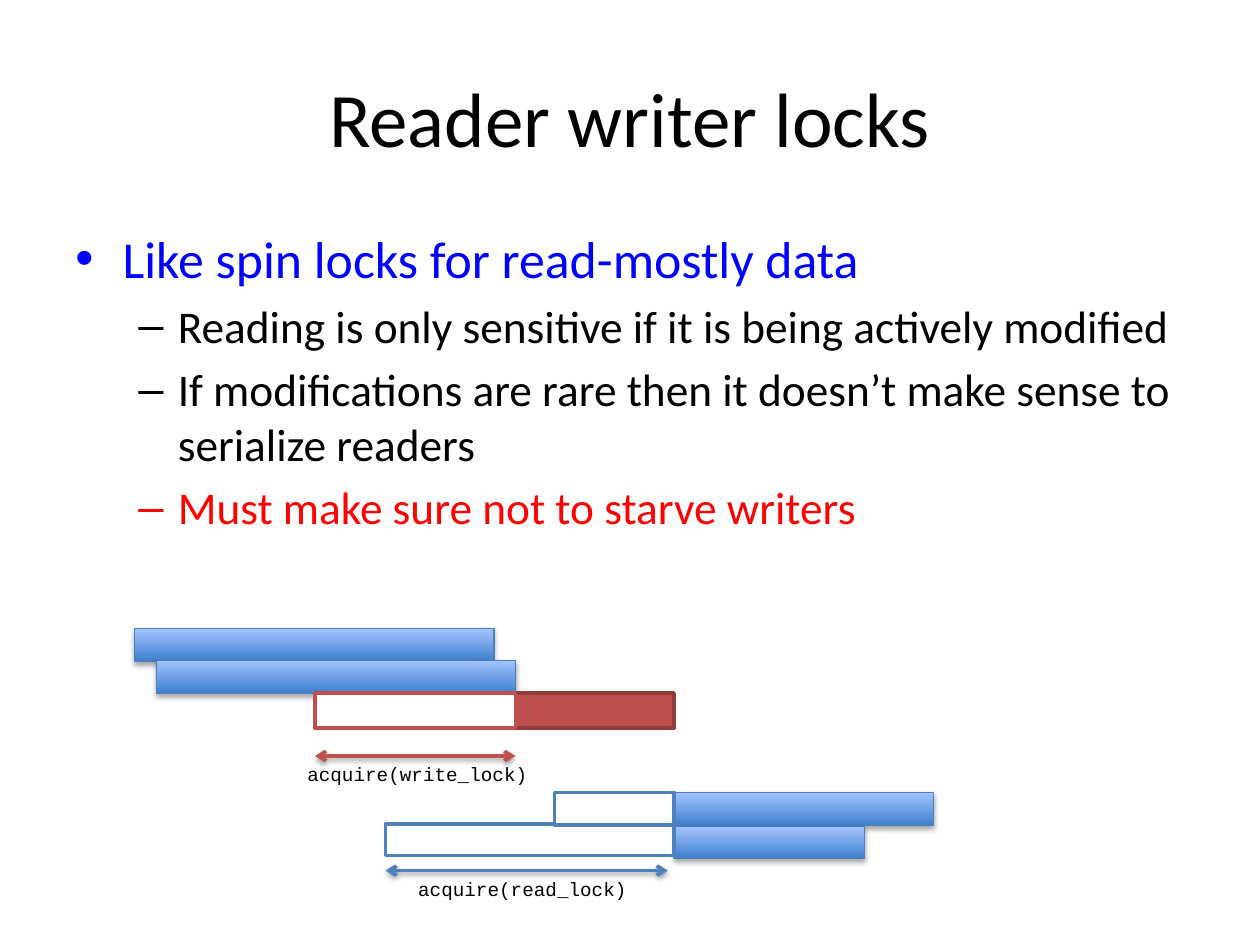
from lxml.etree import SubElement
from pptx import Presentation
from pptx.dml.color import RGBColor
from pptx.enum.shapes import MSO_CONNECTOR, MSO_SHAPE
from pptx.enum.text import MSO_ANCHOR, PP_ALIGN
from pptx.oxml.ns import qn
from pptx.util import Inches, Pt

THEME = {
    "font": "Calibri", "code_font": "Courier New",
    "title_size": 44, "point_size": 29.6, "detail_size": 25.9, "code_size": 11,
    "text": "000000", "point": "0000FF", "warning": "FF0000", "wait": "FFFFFF",
    "reader": "4F81BD", "reader_edge": "4B7EBC",
    "reader_low": "3F80CE", "reader_high": "A4C4FF",
    "writer": "C0504D", "writer_edge": "8E3B39",
}


def write(paragraph, text, font=THEME["font"], size=THEME["detail_size"],
          color=THEME["text"], align=PP_ALIGN.LEFT, before=0):
    run = paragraph.add_run()
    run.text = text
    run.font.name = font
    run.font.size = Pt(size)
    run.font.color.rgb = RGBColor.from_string(color)
    paragraph.alignment = align
    paragraph.space_before = Pt(before)


def cast_shadow(properties, distance, opacity):
    """Add a soft black shadow straight below the drawn object."""
    effects = properties.find(qn("a:effectLst"))
    if effects is None:
        effects = SubElement(properties, qn("a:effectLst"))
    shadow = SubElement(effects, qn("a:outerShdw"), blurRad=str(Pt(3.1)),
                        dist=str(Pt(distance)), dir="5400000", rotWithShape="0")
    black = SubElement(shadow, qn("a:srgbClr"), val="000000")
    SubElement(black, qn("a:alpha"), val=str(opacity * 1000))


presentation = Presentation()
presentation.slide_width, presentation.slide_height = Inches(10), Inches(7.5)
slide = presentation.slides.add_slide(presentation.slide_layouts[5])

# A square grid of 100 columns and 75 rows
COLUMN = presentation.slide_width / 100
ROW = presentation.slide_height / 75

title = slide.shapes.title
title.left, title.top = int(5 * COLUMN), int(3 * ROW)
title.width, title.height = int(90 * COLUMN), int(12.5 * ROW)
title.text_frame.vertical_anchor = MSO_ANCHOR.MIDDLE
write(title.text_frame.paragraphs[0], "Reader writer locks",
      size=THEME["title_size"], align=PP_ALIGN.CENTER)

# Bullet list: text, level, colour
points = [
    ("Like spin locks for read-mostly data", 0, THEME["point"]),
    ("Reading is only sensitive if it is being actively modified", 1, THEME["text"]),
    ("If modifications are rare then it doesn’t make sense to serialize readers",
     1, THEME["text"]),
    ("Must make sure not to starve writers", 1, THEME["warning"]),
]
# Per level: bullet, left margin, hanging indent, type size
levels = [("•", 3.75, 3.75, THEME["point_size"]),
          ("–", 8.13, 3.13, THEME["detail_size"])]
body = slide.shapes.add_textbox(int(5 * COLUMN), int(17.5 * ROW),
                                int(90 * COLUMN), int(27.6 * ROW)).text_frame
body.word_wrap = True
for index, (text, level, color) in enumerate(points):
    paragraph = body.add_paragraph() if index else body.paragraphs[0]
    bullet, margin, hanging, size = levels[level]
    write(paragraph, text, size=size, color=color, before=round(size * 0.2, 1))
    paragraph.level = level
    properties = paragraph._p.get_or_add_pPr()
    properties.set("marL", str(int(margin * COLUMN)))
    properties.set("indent", str(-int(hanging * COLUMN)))
    SubElement(properties, qn("a:buFont"), typeface="Arial")
    SubElement(properties, qn("a:buChar"), char=bullet)

# Timeline bars: start column, end column, top row, height, fill, edge
# Without a fill, a bar is a running reader with a gradient
WRITER_ASKS, WRITER_STARTS, WRITER_ENDS = 25, 40.9, 53.5
READER_ASKS = 30.6
bars = [
    (10.7, 39.2, 49.9, 2.6, None, THEME["reader_edge"]),
    (12.4, WRITER_STARTS, 52.4, 2.6, None, THEME["reader_edge"]),
    (WRITER_STARTS, WRITER_ENDS, 55, 2.8, THEME["writer"], THEME["writer_edge"]),
    (WRITER_ASKS, WRITER_STARTS, 55, 2.8, THEME["wait"], THEME["writer"]),
    (WRITER_ENDS, 74.1, 62.9, 2.6, None, THEME["reader_edge"]),
    (WRITER_ENDS, 68.6, 65.6, 2.5, None, THEME["reader_edge"]),
    (READER_ASKS, WRITER_ENDS, 65.4, 2.5, THEME["wait"], THEME["reader"]),
    (44, WRITER_ENDS, 62.9, 2.6, THEME["wait"], THEME["reader"]),
]
for start, end, top, height, fill, edge in bars:
    bar = slide.shapes.add_shape(
        MSO_SHAPE.RECTANGLE, int(start * COLUMN), int(top * ROW),
        int((end - start) * COLUMN), int(height * ROW))
    bar.shadow.inherit = False
    bar.line.color.rgb = RGBColor.from_string(edge)
    bar.line.width = Pt(2 if fill else 0.75)
    if fill:
        bar.fill.solid()
        bar.fill.fore_color.rgb = RGBColor.from_string(fill)
    else:
        bar.fill.gradient()
        bar.fill.gradient_angle = 90
        for stop, name in zip(bar.fill.gradient_stops, ("reader_low", "reader_high")):
            stop.color.rgb = RGBColor.from_string(THEME[name])
        cast_shadow(bar._element.spPr, distance=1.8, opacity=35)

# Waiting times: label, label column, start column, end column, row, colour
waits = [
    ("acquire(write_lock)", 23.4, WRITER_ASKS, WRITER_STARTS, 60, THEME["writer"]),
    ("acquire(read_lock)", 32.2, READER_ASKS, 53, 69.1, THEME["reader"]),
]
for text, left, start, end, row, color in waits:
    label = slide.shapes.add_textbox(int(left * COLUMN), int(row * ROW),
                                     int(20.8 * COLUMN), int(2.9 * ROW))
    label.text_frame.word_wrap = True
    write(label.text_frame.paragraphs[0], text,
          font=THEME["code_font"], size=THEME["code_size"])

    arrow = slide.shapes.add_connector(
        MSO_CONNECTOR.STRAIGHT, int(start * COLUMN), int(row * ROW),
        int(end * COLUMN), int(row * ROW))
    arrow.line.color.rgb = RGBColor.from_string(color)
    arrow.line.width = Pt(2)
    outline = arrow._element.spPr.find(qn("a:ln"))
    for tip in ("a:headEnd", "a:tailEnd"):
        SubElement(outline, qn(tip), type="arrow")
    cast_shadow(arrow._element.spPr, distance=1.6, opacity=38)

presentation.save("out.pptx")
